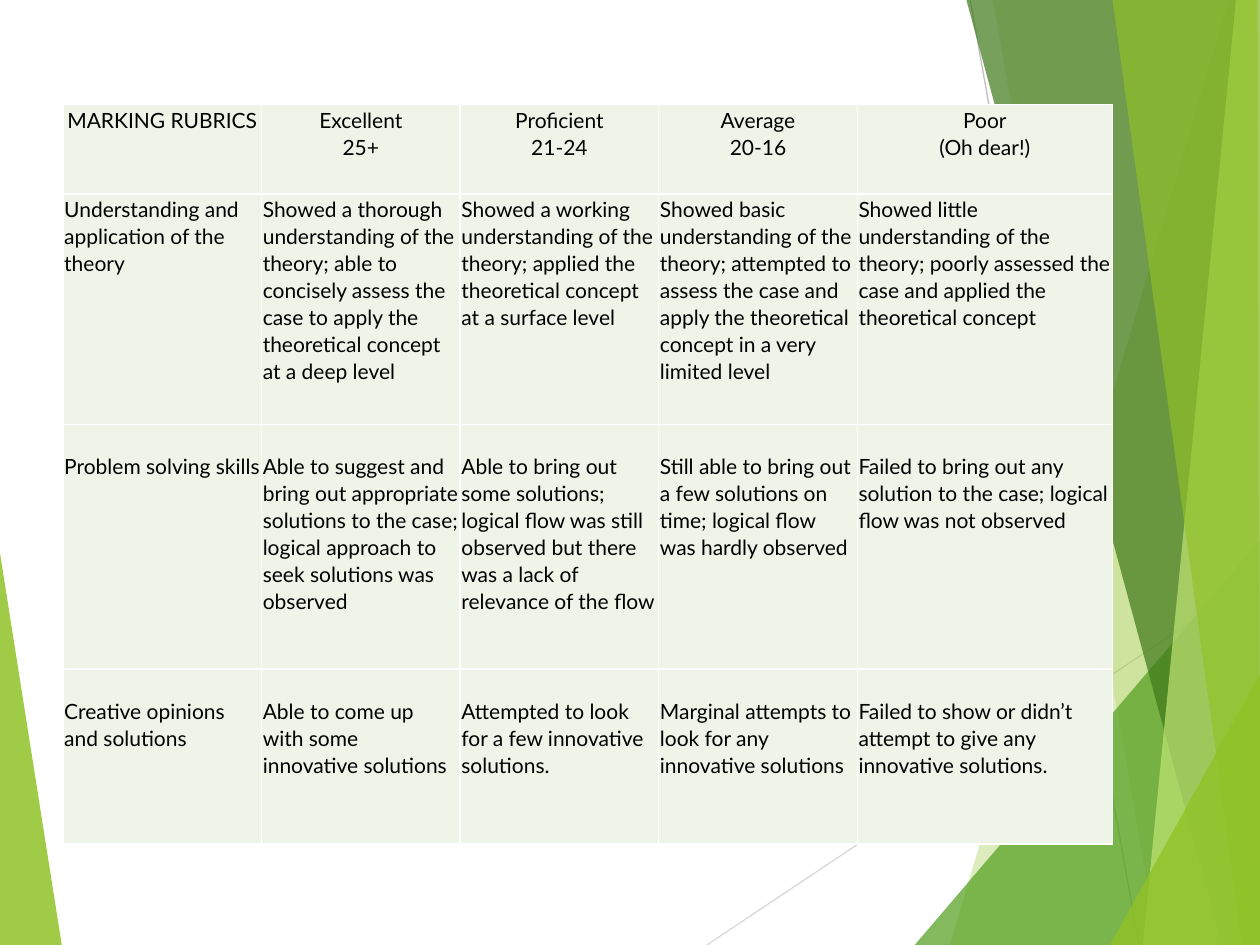
from dataclasses import dataclass

from lxml.etree import SubElement
from pptx import Presentation
from pptx.dml.color import RGBColor
from pptx.enum.shapes import MSO_CONNECTOR
from pptx.enum.text import PP_ALIGN
from pptx.oxml.ns import qn
from pptx.util import Emu, Inches, Pt

BLACK = RGBColor(0x00, 0x00, 0x00)
WHITE = RGBColor(0xFF, 0xFF, 0xFF)
CELL_TINT = RGBColor(0xEE, 0xF4, 0xE8)
LIME = RGBColor(0x90, 0xC2, 0x26)
GREEN = RGBColor(0x54, 0xA0, 0x21)
FOREST = RGBColor(0x3F, 0x78, 0x19)
PALE_LIME = RGBColor(0xC0, 0xE4, 0x74)
LIGHT_GREY = RGBColor(0xD9, 0xD9, 0xD9)
GREY = RGBColor(0xBF, 0xBF, 0xBF)

GRID_COLUMNS = 100
GRID_ROWS = 75

LEFT_WEDGE = ([(0, 43.9), (4.9, 75), (0, 75)], LIME, 85)
RIGHT_SHARDS = [
    ([(97.5, 0), (75.4, 75), (100, 75), (100, 0)], LIME, 30),
    ([(78.8, 0), (91.9, 75), (100, 75), (100, 0)], LIME, 20),
    ([(72.6, 75), (100, 42.9), (100, 75)], GREEN, 72),
    ([(76.7, 0), (97, 75), (100, 75), (100, 0)], FOREST, 70),
    ([(98.1, 0), (90.7, 75), (100, 75), (100, 0)], PALE_LIME, 70),
    ([(88.3, 0), (98.6, 75), (100, 75), (99.8, 0)], LIME, 65),
    ([(88.1, 75), (100, 53.5), (100, 75)], LIME, 80),
]
THIN_LINES = [
    ((56.1, 75), (100, 45.7), LIGHT_GREY),
    ((77, 0), (90.4, 75), GREY),
]

COLUMN_WEIGHTS = [1.58, 1.58, 1.58, 1.58, 2.03]
ROW_WEIGHTS = [0.71, 1.83, 1.94, 1.39]
CELL_INSET = 0.01
LOWERED_INSET = 0.22
RUBRIC = [
    [["MARKING RUBRICS"], ["Excellent", "25+"], ["Proficient", "21-24"],
     ["Average", "20-16"], ["Poor", "(Oh dear!)"]],
    [["Understanding and application of the theory"],
     ["Showed a thorough understanding of the theory; able to concisely assess "
      "the case to apply the theoretical concept at a deep level"],
     ["Showed a working understanding of the theory; applied the theoretical "
      "concept at a surface level"],
     ["Showed basic understanding of the theory; attempted to assess the case "
      "and apply the theoretical concept in a very limited level"],
     ["Showed little understanding of the theory; poorly assessed the case and "
      "applied the theoretical concept"]],
    [["Problem solving skills"],
     ["Able to suggest and bring out appropriate solutions to the case; logical "
      "approach to seek solutions was observed"],
     ["Able to bring out some solutions; logical flow was still observed but "
      "there was a lack of relevance of the flow"],
     ["Still able to bring out a few solutions on time; logical flow was hardly "
      "observed"],
     ["Failed to bring out any solution to the case; logical flow was not "
      "observed"]],
    [["Creative opinions and solutions"],
     ["Able to come up with some innovative solutions"],
     ["Attempted to look for a few innovative solutions."],
     ["Marginal attempts to look for any innovative solutions"],
     ["Failed to show or didn’t attempt to give any innovative solutions."]],
]


@dataclass
class Box:
    left: int
    top: int
    width: int
    height: int

    def point(self, column, row):
        return (Emu(round(self.left + self.width * column / GRID_COLUMNS)),
                Emu(round(self.top + self.height * row / GRID_ROWS)))

    def area(self, column, row, columns, rows):
        left, top = self.point(column, row)
        right, bottom = self.point(column + columns, row + rows)
        return Box(left, top, right - left, bottom - top)


def write_text(frame, lines, size=12, font="Lato", color=BLACK,
               align=PP_ALIGN.LEFT, spacing=1.07):
    frame.word_wrap = True
    for index, line in enumerate(lines):
        para = frame.paragraphs[0] if index == 0 else frame.add_paragraph()
        para.alignment = align
        para.line_spacing = spacing
        span = para.add_run()
        span.text = line
        span.font.size = Pt(size)
        span.font.name = font
        span.font.color.rgb = color


def draw_shard(page, box, corners, color, opacity):
    points = [box.point(*corner) for corner in corners]
    builder = page.shapes.build_freeform(*points[0])
    builder.add_line_segments(points[1:], close=True)
    shard = builder.convert_to_shape()
    shard.shadow.inherit = False
    shard.line.fill.background()
    shard.fill.solid()
    shard.fill.fore_color.rgb = color
    color_node = shard._element.spPr.find(qn("a:solidFill"))[0]
    SubElement(color_node, qn("a:alpha")).set("val", str(opacity * 1000))


def draw_line(page, box, start, end, color):
    line = page.shapes.add_connector(
        MSO_CONNECTOR.STRAIGHT, *box.point(*start), *box.point(*end))
    line.line.color.rgb = color
    line.line.width = Pt(0.75)
    SubElement(line._element.spPr, qn("a:effectLst"))


def draw_backdrop(page, box):
    draw_shard(page, box, *LEFT_WEDGE)
    for thin_line in THIN_LINES:
        draw_line(page, box, *thin_line)
    for shard in RIGHT_SHARDS:
        draw_shard(page, box, *shard)


def style_cell(cell, top_inset):
    cell.margin_left = cell.margin_right = cell.margin_bottom = Inches(CELL_INSET)
    cell.margin_top = Inches(top_inset)
    properties = cell._tc.get_or_add_tcPr()
    for side in ("lnL", "lnR", "lnT", "lnB"):
        border = SubElement(properties, qn(f"a:{side}"), w=str(int(Pt(1))))
        border_fill = SubElement(border, qn("a:solidFill"))
        SubElement(border_fill, qn("a:srgbClr"), val=str(WHITE))
    cell.fill.solid()
    cell.fill.fore_color.rgb = CELL_TINT


def draw_rubric(page, box):
    table = page.shapes.add_table(
        len(ROW_WEIGHTS), len(COLUMN_WEIGHTS),
        box.left, box.top, box.width, box.height).table
    table.first_row = False
    table.horz_banding = False
    for column, weight in zip(table.columns, COLUMN_WEIGHTS):
        column.width = Emu(round(box.width * weight / sum(COLUMN_WEIGHTS)))
    for row, weight in zip(table.rows, ROW_WEIGHTS):
        row.height = Emu(round(box.height * weight / sum(ROW_WEIGHTS)))
    for row_index, entries in enumerate(RUBRIC):
        align = PP_ALIGN.CENTER if row_index == 0 else PP_ALIGN.LEFT
        top_inset = LOWERED_INSET if row_index >= 2 else CELL_INSET
        for column_index, lines in enumerate(entries):
            cell = table.cell(row_index, column_index)
            style_cell(cell, top_inset)
            write_text(cell.text_frame, lines, align=align)


def main():
    deck = Presentation()
    deck.slide_width = Inches(10)
    deck.slide_height = Inches(7.5)
    page = deck.slides.add_slide(deck.slide_layouts[6])
    page.background.fill.solid()
    page.background.fill.fore_color.rgb = WHITE
    whole = Box(0, 0, deck.slide_width, deck.slide_height)
    draw_backdrop(page, whole)
    draw_rubric(page, whole.area(5, 8.3, 83.3, 58.7))
    deck.save("out.pptx")


if __name__ == "__main__":
    main()
